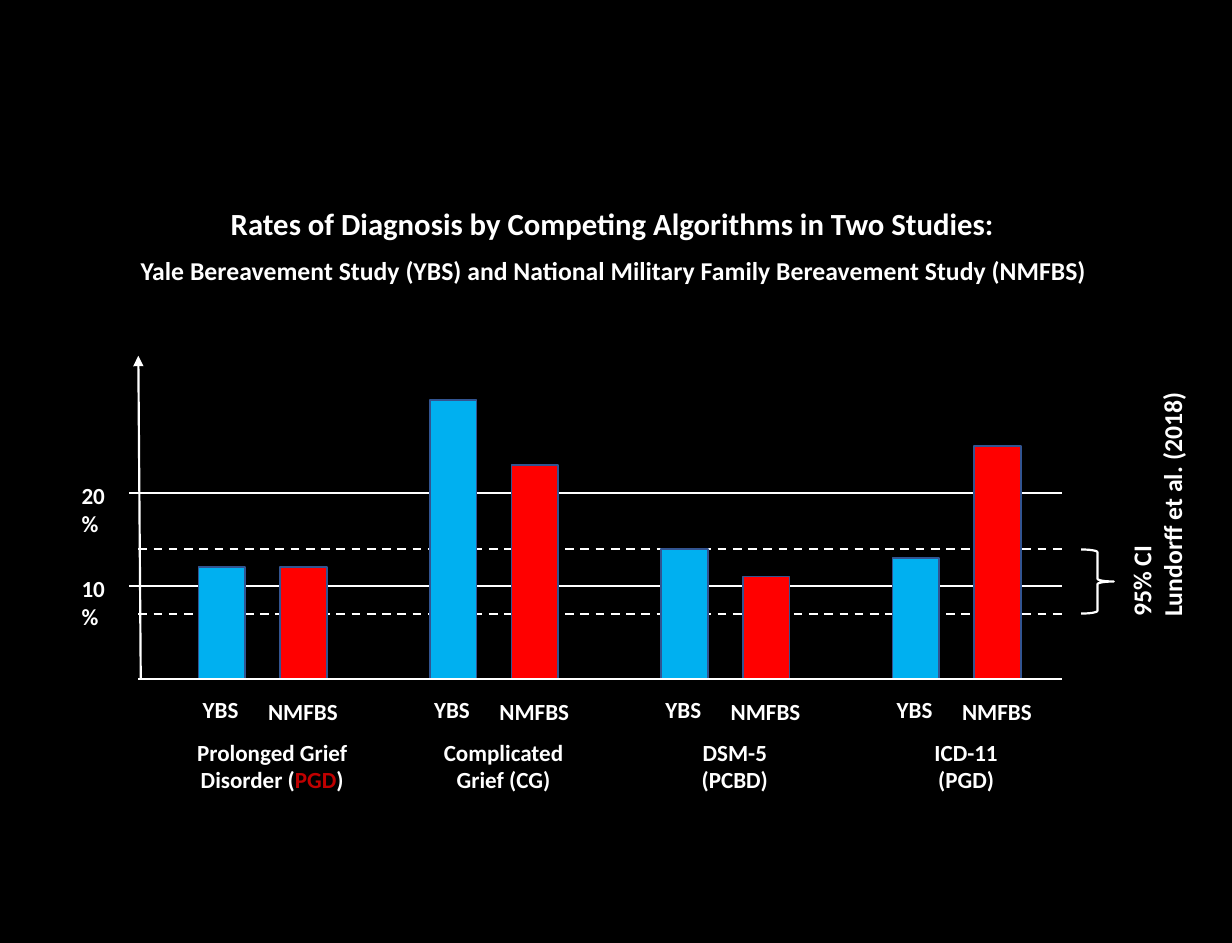
from lxml import etree
from pptx import Presentation
from pptx import util as u
from pptx.dml.color import RGBColor
from pptx.enum import dml, shapes, text
from pptx.oxml.ns import qn

BLACK = RGBColor(0x00, 0x00, 0x00)
WHITE = RGBColor(0xFF, 0xFF, 0xFF)
BLUE = RGBColor(0x00, 0xB0, 0xF0)
RED = RGBColor(0xFF, 0x00, 0x00)
EDGE = RGBColor(0x32, 0x54, 0x91)
ACCENT = RGBColor(0xC0, 0x00, 0x00)

CENTER = text.PP_ALIGN.CENTER
LEFT = text.PP_ALIGN.LEFT
AXIS = 1.1
RIGHT = 8.45
BASE = 5.4
TENTH = 0.74
FIRST = 1.58
STEP = 1.84

GROUPS = [
    (12, 12, ["Prolonged Grief", "Disorder (|PGD|)"]),
    (30, 23, ["Complicated", "Grief (CG)"]),
    (14, 11, ["DSM-5", "(PCBD)"]),
    (13, 25, ["ICD-11", "(PGD)"]),
]


class Painter:
    """Draws styled elements on the current slide."""

    def __init__(self, deck):
        self.font = "Calibri"
        self.slide = deck.slides.add_slide(deck.slide_layouts[5])
        fill = self.slide.background.fill
        fill.solid()
        fill.fore_color.rgb = BLACK

    def letter(self, shape, lines, size, align, wrap=False):
        frame = shape.text_frame
        frame.text = "\n".join(lines)
        frame.word_wrap = wrap
        frame.auto_size = text.MSO_AUTO_SIZE.NONE
        frame.vertical_anchor = text.MSO_ANCHOR.TOP
        for para, line in zip(frame.paragraphs, lines):
            para.alignment = align
            parts = line.split("|")
            para.text = parts[0]
            for part in parts[1:]:
                para.add_run().text = part
            for i, run in enumerate(para.runs):
                run.font.name = self.font
                run.font.size = u.Pt(size)
                run.font.bold = True
                run.font.color.rgb = ACCENT if i % 2 else WHITE

    def title(self, x, y, w, h, words, size):
        shape = self.slide.shapes.title
        shape.left, shape.top = u.Inches(x), u.Inches(y)
        shape.width, shape.height = u.Inches(w), u.Inches(h)
        self.letter(shape, [words], size, CENTER)

    def label(self, x, y, w, h, lines, size=13.2, align=CENTER, wrap=False, turn=0):
        box = self.slide.shapes.add_textbox(*map(u.Inches, (x, y, w, h)))
        box.rotation = turn
        self.letter(box, lines, size, align, wrap)

    def line(self, x1, y1, x2, y2, dash=False, arrow=False):
        link = self.slide.shapes.add_connector(
            shapes.MSO_CONNECTOR.STRAIGHT, *map(u.Inches, (x1, y1, x2, y2)))
        link.line.color.rgb = WHITE
        link.line.width = u.Pt(1.25)
        if dash:
            link.line.dash_style = dml.MSO_LINE.DASH
        props = link._element.spPr
        if arrow:
            head = etree.SubElement(props.find(qn("a:ln")), qn("a:headEnd"))
            head.set("type", "triangle")
        etree.SubElement(props, qn("a:effectLst"))

    def bar(self, x, rate, color):
        high = rate / 10 * TENTH
        rect = self.slide.shapes.add_shape(
            shapes.MSO_SHAPE.RECTANGLE, *map(u.Inches, (x, BASE - high, 0.37, high)))
        rect.shadow.inherit = False
        rect.fill.solid()
        rect.fill.fore_color.rgb = color
        rect.line.color.rgb = EDGE
        rect.line.width = u.Pt(1)

    def brace(self, x, y, w, h):
        shape = self.slide.shapes.add_shape(
            shapes.MSO_SHAPE.RIGHT_BRACE, *map(u.Inches, (x, y, w, h)))
        shape.shadow.inherit = False
        shape.fill.background()
        shape.line.color.rgb = WHITE
        shape.line.width = u.Pt(1.25)


def main():
    deck = Presentation()
    deck.slide_width, deck.slide_height = u.Inches(9.8), u.Inches(7.5)
    pen = Painter(deck)

    pen.title(1.7, 1.58, 6.35, 0.4,
              "Rates of Diagnosis by Competing Algorithms in Two Studies:", 17.6)
    pen.label(1.02, 1.98, 7.79, 0.35,
              ["Yale Bereavement Study (YBS) and National Military Family "
               "Bereavement Study (NMFBS)"], 14.7, LEFT)

    for rate in (10, 20):
        y = BASE - rate / 10 * TENTH
        pen.line(1.03, y, RIGHT, y)
        pen.label(0.55, y - 0.14, 0.49, 0.55, [f"{rate}%"], align=LEFT, wrap=True)
    for rate in (7, 14):
        y = BASE - rate / 10 * TENTH
        pen.line(AXIS, y, RIGHT, y, dash=True)
    pen.line(AXIS, 2.83, 1.12, BASE, arrow=True)

    for i, (yale, army, name) in enumerate(GROUPS):
        x = FIRST + i * STEP
        pen.bar(x, yale, BLUE)
        pen.bar(x + 0.65, army, RED)
        pen.label(x - 0.07, 5.48, 0.49, 0.32, ["YBS"])
        pen.label(x + 0.45, 5.5, 0.76, 0.32, ["NMFBS"])
        pen.label(x - 0.14, 5.82, 1.45, 0.55, name)
    pen.line(AXIS, BASE, RIGHT, BASE)

    pen.brace(8.6, 4.37, 0.26, 0.51)
    pen.label(8.2, 3.7, 2.01, 0.6, ["95% CI", "Lundorff et al. (2018)"],
              14.7, LEFT, turn=270)
    deck.save("out.pptx")


if __name__ == "__main__":
    main()
